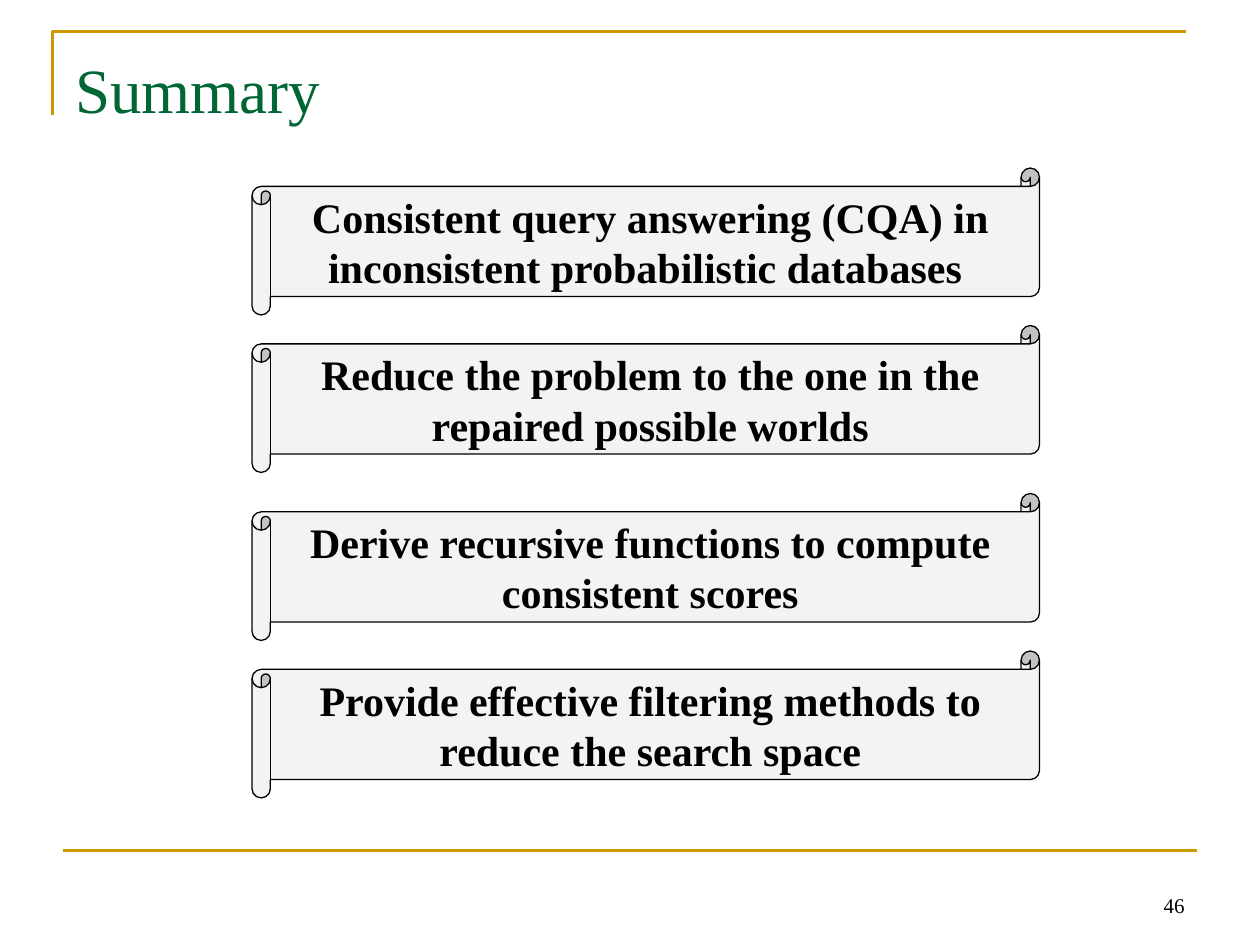
import pptx
import pptx.util
import pptx.dml.color
import pptx.enum.shapes
import pptx.enum.text
import lxml.etree

Pt = pptx.util.Pt
Shape = pptx.enum.shapes.MSO_SHAPE
Align = pptx.enum.text.PP_ALIGN
Anchor = pptx.enum.text.MSO_ANCHOR
GOLD = "CC9900"
POINTS = [
    (96, "Consistent query answering (CQA) in inconsistent probabilistic databases "),
    (186, "Reduce the problem to the one in the repaired possible worlds"),
    (282, "Derive recursive functions to compute consistent scores"),
    (372, "Provide effective filtering methods to reduce the search space"),
]


def color(value):
    """Turn a hex string into a colour."""
    return pptx.dml.color.RGBColor.from_string(value)


def stroke(line, value, width):
    """Set the colour and width of a line."""
    line.color.rgb = color(value)
    line.width = Pt(width)


def write(shape, text, size, tint, align, anchor, bold=False):
    """Fill a shape with one styled paragraph."""
    frame = shape.text_frame
    frame.word_wrap = True
    frame.vertical_anchor = anchor
    para = frame.paragraphs[0]
    para.text = text
    para.alignment = align
    font = para.font
    font.name = "Times New Roman"
    font.size = Pt(size)
    font.bold = bold
    font.color.rgb = color(tint)


def label(slide, box, *style):
    """Add a text box with one styled paragraph."""
    shape = slide.shapes.add_textbox(*map(Pt, box))
    write(shape, *style)
    return shape


def header(slide, left, top, width, height):
    """Draw the corner rule and the slide title below it."""
    path = slide.shapes.build_freeform(Pt(left), Pt(top + height))
    path.add_line_segments(
        [(Pt(left), Pt(top)), (Pt(left + width), Pt(top))], close=False
    )
    rule = path.convert_to_shape()
    rule.shadow.inherit = False
    rule.fill.background()
    stroke(rule.line, GOLD, 1.5)
    title = label(slide, (left + 6, top + 3.6, width, 90), "Summary", 36,
                  "006633", Align.LEFT, Anchor.TOP)
    title.text_frame.margin_top = Pt(7.2)


def footer(slide, left, top, width):
    """Draw the bottom rule and the page number."""
    rule = slide.shapes.add_connector(
        pptx.enum.shapes.MSO_CONNECTOR.STRAIGHT,
        Pt(left), Pt(top), Pt(left + width), Pt(top),
    )
    stroke(rule.line, GOLD, 1.5)
    props = rule.element.spPr
    lxml.etree.SubElement(props, pptx.oxml.ns.qn("a:effectLst"))
    label(slide, (left + width - 168, top + 6, 168, 36), "46", 12,
          "000000", Align.RIGHT, Anchor.BOTTOM)


def scroll(slide, left, top, width, height, text):
    """Draw one scroll with a bold key point."""
    shape = slide.shapes.add_shape(
        Shape.HORIZONTAL_SCROLL, *map(Pt, (left, top, width, height))
    )
    shape.shadow.inherit = False
    shape.fill.solid()
    shape.fill.fore_color.rgb = color("F3F3F3")
    stroke(shape.line, "000000", 0.75)
    write(shape, text, 24, "000000", Align.CENTER, Anchor.MIDDLE, True)


def main():
    """Build and save the summary slide."""
    deck = pptx.Presentation()
    deck.slide_width, deck.slide_height = Pt(720), Pt(540)
    slide = deck.slides.add_slide(deck.slide_layouts[6])
    header(slide, 30, 18, 648, 48)
    footer(slide, 36, 486, 648)
    for top, text in POINTS:
        scroll(slide, 144, top, 450, 84, text)
    deck.save("out.pptx")


if __name__ == "__main__":
    main()
